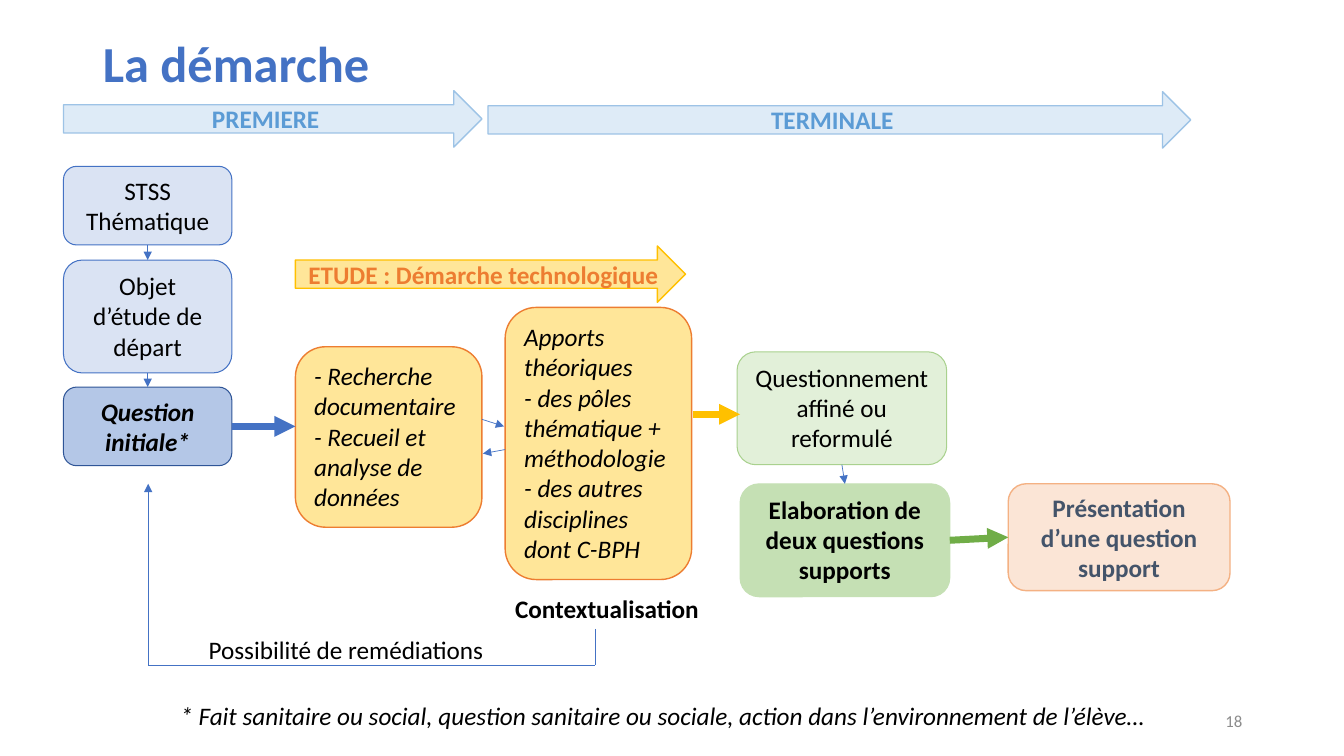
from lxml.etree import SubElement
from pptx import Presentation
from pptx.dml.color import RGBColor
from pptx.enum.shapes import MSO_CONNECTOR as Connector, MSO_SHAPE as Shape
from pptx.enum.text import MSO_ANCHOR as Anchor, PP_ALIGN as Align
from pptx.oxml.ns import qn
from pptx.util import Pt

PX = 9144
COLOURS = {
    "black": "000000", "blue": "4472C4", "navy": "2F5597", "pale blue": "DAE3F3",
    "mid blue": "B4C7E7", "sky": "5B9BD5", "sky line": "9DC3E6", "pale sky": "DEEBF7",
    "gold": "FFC000", "pale gold": "FFE699", "orange": "ED7D31", "peach": "FBE5D6",
    "peach line": "F4B183", "slate": "44546A", "green": "70AD47", "mid green": "C5E0B4",
    "pale green": "E2F0D9", "green line": "A9D18E", "grey": "8C8C8C",
}


def colour(name):
    """Return the named colour."""
    return RGBColor.from_string(COLOURS[name])


def emu(*lengths):
    """Turn px lengths into EMU."""
    return [length * PX for length in lengths]


def write(shape, text, ink="black", size=18, bold=False, italic=False,
          align=Align.LEFT, anchor=Anchor.TOP):
    """Fill a shape with formatted text, one paragraph a line."""
    frame = shape.text_frame
    frame.text = text
    frame.word_wrap = True
    frame.vertical_anchor = anchor
    for paragraph in frame.paragraphs:
        paragraph.alignment = align
        for run in paragraph.runs:
            font = run.font
            font.name, font.size = "Calibri", Pt(size)
            font.bold, font.italic = bold, italic
            font.color.rgb = colour(ink)


def add_label(slide, box, text, **style):
    """Add a text box."""
    write(slide.shapes.add_textbox(*emu(*box)), text, **style)


def add_block(slide, box, text, fill, line, width=0.75,
              kind=Shape.ROUNDED_RECTANGLE, align=Align.CENTER, **style):
    """Add a filled and outlined shape with text."""
    shape = slide.shapes.add_shape(kind, *emu(*box))
    shape.shadow.inherit = False
    shape.fill.solid()
    shape.fill.fore_color.rgb = colour(fill)
    shape.line.color.rgb = colour(line)
    shape.line.width = Pt(width)
    write(shape, text, align=align, **style)
    return shape


def add_banner(slide, box, text, fill, line, ink):
    """Add a wide arrow carrying a bold caption."""
    add_block(slide, box, text, fill, line, 1, Shape.RIGHT_ARROW,
              ink=ink, bold=True, anchor=Anchor.MIDDLE)


def add_link(slide, start, end, ink="blue", width=0.5, head=True, source=None, target=None):
    """Draw a line, joined to (shape, side) pairs where given."""
    link = slide.shapes.add_connector(Connector.STRAIGHT, *emu(*start, *end))
    if source:
        link.begin_connect(*source)
    if target:
        link.end_connect(*target)
    link.line.color.rgb = colour(ink)
    link.line.width = Pt(width)
    if head:
        SubElement(link.line._get_or_add_ln(), qn("a:tailEnd"), type="triangle")
    SubElement(link._element.spPr, qn("a:effectLst"))


def add_heading(slide, left, top, width, height):
    """Place the title and the two school year banners."""
    title = slide.shapes.title
    title.left, title.top, title.width, title.height = emu(left + 29, top, width, height)
    write(title, "La démarche", "blue", 36, bold=True, anchor=Anchor.MIDDLE)
    title.text_frame.paragraphs[0].line_spacing = 0.9
    for offset, drop, length, year in ((0, 97, 415, "PREMIERE"), (421, 98, 697, "TERMINALE")):
        add_banner(slide, (left + offset, top + drop, length, 56), year,
                   "pale sky", "sky line", "sky")


def add_question_column(slide, left, top, width):
    """Stack the steps that lead to the initial question, and return the last."""
    steps = (
        (0, 78, "STSS Thématique", "pale blue", "blue", False),
        (93, 112, "Objet d’étude de départ", "pale blue", "blue", False),
        (219, 78, "Question initiale*", "mid blue", "navy", True),
    )
    previous = None
    for drop, height, text, fill, line, strong in steps:
        step = add_block(slide, (left, top + drop, width, height), text, fill, line,
                         bold=strong, italic=strong)
        if previous:
            add_link(slide, (left, top), (left, top), source=(previous, 2), target=(step, 0))
        previous = step
    return previous


def add_study(slide, left, top, width, question):
    """Place the study banner, its two exchanging blocks and the incoming arrow."""
    add_banner(slide, (left, top, 387, 56), "ETUDE : Démarche technologique",
               "pale gold", "gold", "orange")
    blocks = (
        (0, 100, 179, "- Recherche documentaire\n- Recueil et analyse de données"),
        (208, 61, 270, "Apports théoriques\n- des pôles thématique + méthodologie\n"
                       "- des autres disciplines dont C-BPH"),
    )
    for offset, drop, height, text in blocks:
        add_block(slide, (left + offset, top + drop, width, height), text,
                  "pale gold", "orange", 1, align=Align.LEFT, italic=True)
    add_label(slide, (left + 208, top + 340, 208, 40), "Contextualisation", bold=True)
    add_link(slide, (left, top), (left, top + 179), width=5, source=(question, 3))
    add_link(slide, (left + 185, top + 172), (left + 207, top + 179))
    add_link(slide, (left + 208, top + 202), (left + 186, top + 206))


def add_outcome(slide, left, top, width, height):
    """Place the refined question, the support questions and the presentation."""
    refined = add_block(slide, (left, top, width, height),
                        "Questionnement affiné ou reformulé", "pale green", "green line")
    support = add_block(slide, (left + 3, top + 131, width, height),
                        "Elaboration de deux questions supports",
                        "mid green", "mid green", bold=True)
    final = add_block(slide, (left + 269, top + 131, 220, 106),
                      "Présentation d’une question support", "peach", "peach line", 1,
                      ink="slate", bold=True, anchor=Anchor.MIDDLE)
    corner = (left, top)
    add_link(slide, (left - 44, top + 62), (left + 3, top + 62), "gold", 5)
    add_link(slide, corner, corner, source=(refined, 2), target=(support, 0))
    add_link(slide, corner, corner, "green", 5, source=(support, 3), target=(final, 1))


def add_feedback(slide, left, top, width, height):
    """Draw the return path to the initial question."""
    right, bottom = left + width, top + height
    add_link(slide, (right, top + 144), (right, bottom), head=False)
    add_link(slide, (right, bottom), (left, bottom), head=False)
    add_link(slide, (left, bottom), (left, top))
    add_label(slide, (left + 50, top + 144, 368, 40), "Possibilité de remédiations")


def add_footer(slide, left, top):
    """Place the footnote and the page number."""
    add_label(slide, (left, top, 1036, 41),
              "* Fait sanitaire ou social, question sanitaire ou sociale, "
              "action dans l’environnement de l’élève…", italic=True)
    add_label(slide, (left + 773, top + 5, 300, 40), "18", ink="grey", size=12,
              align=Align.RIGHT, anchor=Anchor.MIDDLE)


def main():
    """Build and save the slide."""
    presentation = Presentation()
    presentation.slide_width, presentation.slide_height = emu(1333, 750)
    slide = presentation.slides.add_slide(presentation.slide_layouts[5])
    add_heading(slide, 63, -7, 1150, 145)
    question = add_question_column(slide, 63, 165, 167)
    add_study(slide, 293, 244, 185, question)
    add_outcome(slide, 731, 349, 208, 112)
    add_feedback(slide, 147, 480, 443, 180)
    add_footer(slide, 169, 690)
    presentation.save("out.pptx")


if __name__ == "__main__":
    main()
